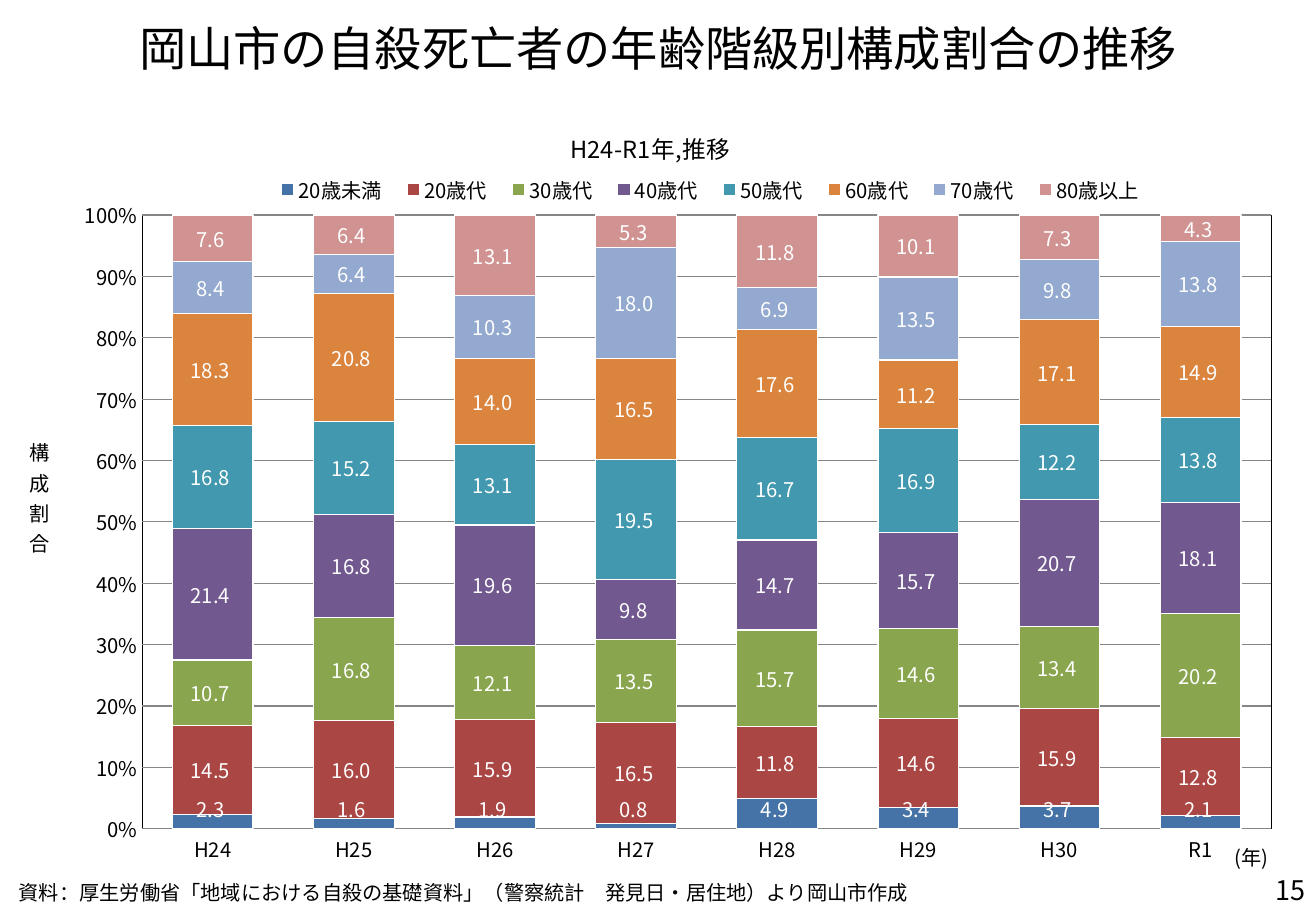
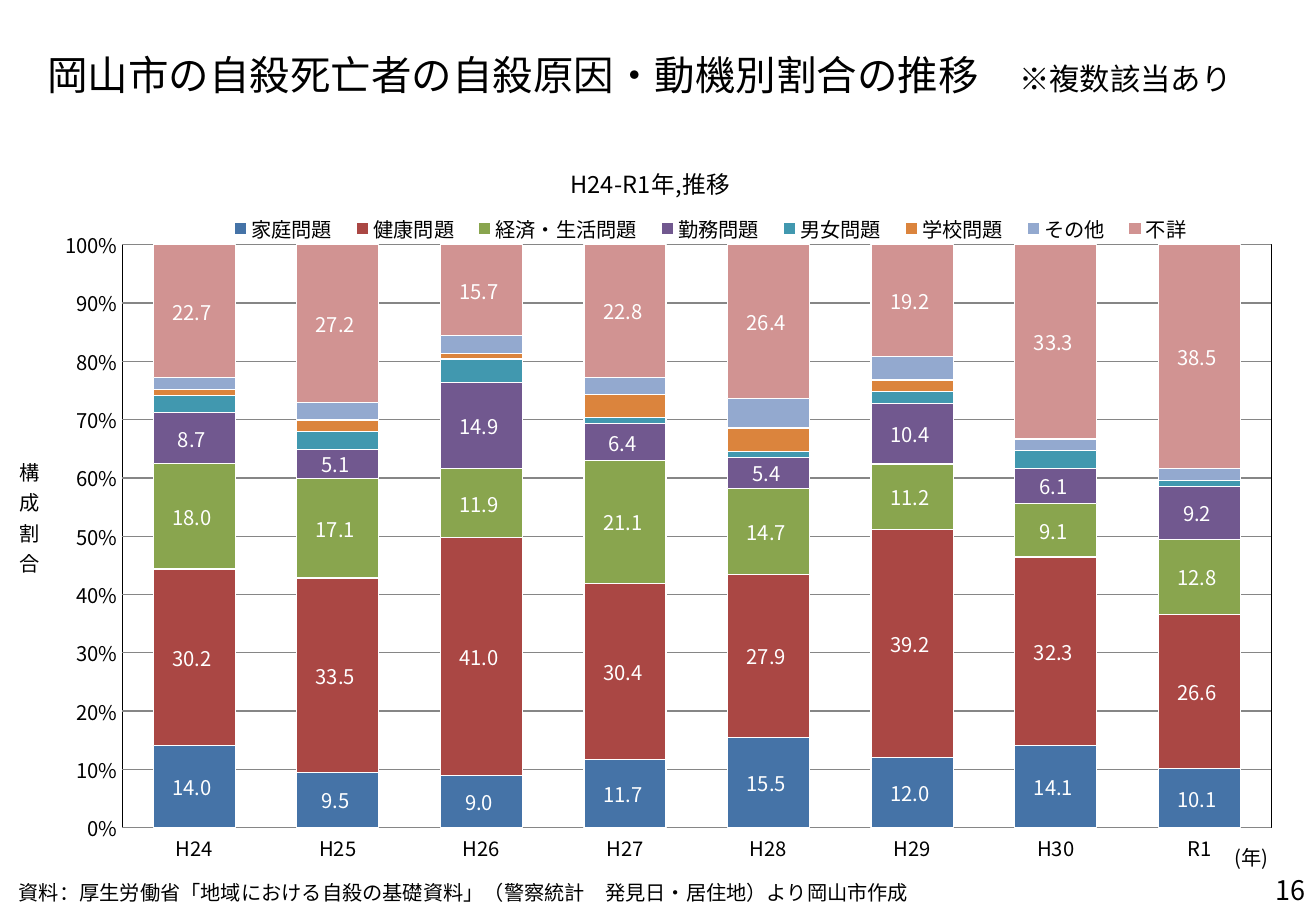
from copy import deepcopy

from lxml.etree import SubElement
from pptx import Presentation
from pptx.chart.data import CategoryChartData
from pptx.dml.color import RGBColor
from pptx.enum.chart import (XL_CHART_TYPE, XL_LABEL_POSITION,
                             XL_LEGEND_POSITION, XL_TICK_MARK)
from pptx.enum.text import MSO_ANCHOR, MSO_AUTO_SIZE, PP_ALIGN
from pptx.oxml import parse_xml
from pptx.oxml.ns import nsdecls, qn
from pptx.util import Pt

FONT = "Noto Sans CJK JP"
BLACK = RGBColor(0x00, 0x00, 0x00)
WHITE = RGBColor(0xFF, 0xFF, 0xFF)
GRID_GREY = RGBColor(0x86, 0x86, 0x86)
SERIES_COLORS = [
    RGBColor(0x45, 0x73, 0xA7), RGBColor(0xAA, 0x47, 0x44),
    RGBColor(0x89, 0xA5, 0x4E), RGBColor(0x71, 0x58, 0x8F),
    RGBColor(0x41, 0x98, 0xAF), RGBColor(0xDB, 0x84, 0x3D),
    RGBColor(0x93, 0xA9, 0xCF), RGBColor(0xD1, 0x93, 0x92),
]
SLIDE_WIDTH, SLIDE_HEIGHT = 780, 540
NUMBER_FORMAT = "0.0_ "
YEARS = ["H24", "H25", "H26", "H27", "H28", "H29", "H30", "R1"]
SOURCE_NOTE = ("資料：厚生労働省「地域における自殺の基礎資料」"
               "（警察統計　発見日・居住地）より岡山市作成")

AGE_GROUPS = {
    "20歳未満": [2.3, 1.6, 1.9, 0.8, 4.9, 3.4, 3.7, 2.1],
    "20歳代": [14.5, 16, 15.9, 16.5, 11.8, 14.6, 15.9, 12.8],
    "30歳代": [10.7, 16.8, 12.1, 13.5, 15.7, 14.6, 13.4, 20.2],
    "40歳代": [21.4, 16.8, 19.6, 9.8, 14.7, 15.7, 20.7, 18.1],
    "50歳代": [16.8, 15.2, 13.1, 19.5, 16.7, 16.9, 12.2, 13.8],
    "60歳代": [18.3, 20.8, 14, 16.5, 17.6, 11.2, 17.1, 14.9],
    "70歳代": [8.4, 6.4, 10.3, 18, 6.9, 13.5, 9.8, 13.8],
    "80歳以上": [7.6, 6.4, 13.1, 5.3, 11.8, 10.1, 7.3, 4.3],
}
MOTIVES = {
    "家庭問題": [14, 9.5, 9, 11.7, 15.5, 12, 14.1, 10.1],
    "健康問題": [30.2, 33.5, 41, 30.4, 27.9, 39.2, 32.3, 26.6],
    "経済・生活問題": [18, 17.1, 11.9, 21.1, 14.7, 11.2, 9.1, 12.8],
    "勤務問題": [8.7, 5.1, 14.9, 6.4, 5.4, 10.4, 6.1, 9.2],
    "男女問題": [3, 3, 4, 1, 1, 2, 3, 1],
    "学校問題": [1, 2, 1, 4, 4, 2, 0, 0],
    "その他": [2, 3, 3, 3, 5, 4, 2, 2],
    "不詳": [22.7, 27.2, 15.7, 22.8, 26.4, 19.2, 33.3, 38.5],
}

# Each slide: title runs (text, size), boxes in points, layouts as chart fractions
SLIDES = [
    dict(number="15", title=[("岡山市の自殺死亡者の年齢階級別構成割合の推移", 28)],
         title_box=(0, 0, 780, 57), chart_box=(0, 57, 780, 461),
         data=AGE_GROUPS, unlabelled=(), base_labelled=("20歳未満",),
         plot=(0.108, 0.153, 0.858, 0.789), legend=(0.2, 0.09, 0.68, 0.06),
         axis_title=(0.02, 0.43)),
    dict(number="16", title=[("岡山市の自殺死亡者の自殺原因・動機別割合の推移　", 24),
                             ("※複数該当あり", 18)],
         title_box=(16, 26, 726, 36), chart_box=(0, 78.5, 780, 438.5),
         data=MOTIVES, unlabelled=("男女問題", "学校問題", "その他"), base_labelled=(),
         plot=(0.093, 0.152, 0.873, 0.788), legend=(0.165, 0.1, 0.75, 0.06),
         axis_title=(0.012, 0.43)),
]


def style_font(font, size, color=BLACK):
    font.name = FONT
    font.size = Pt(size)
    font.bold = False
    font.color.rgb = color


def use_east_asian_font(element):
    """Give every Latin font an East Asian twin."""
    for latin in list(element.iter(qn("a:latin"))):
        east_asian = deepcopy(latin)
        east_asian.tag = qn("a:ea")
        latin.addnext(east_asian)


def add_text(slide, box, runs, align=PP_ALIGN.LEFT, grow=True):
    shape = slide.shapes.add_textbox(*map(Pt, box))
    frame = shape.text_frame
    frame.word_wrap = True
    if grow:
        frame.auto_size = MSO_AUTO_SIZE.SHAPE_TO_FIT_TEXT
    else:
        frame.vertical_anchor = MSO_ANCHOR.MIDDLE
    paragraph = frame.paragraphs[0]
    paragraph.alignment = align
    for text, size in runs:
        run = paragraph.add_run()
        run.text = text
        style_font(run.font, size)
    use_east_asian_font(shape.element)


def set_layout(parent, previous_tag, fractions, inner=False):
    """Fix a chart part at x, y (and width, height) as fractions of the chart."""
    for old_layout in parent.findall(qn("c:layout")):
        parent.remove(old_layout)
    layout = parse_xml(f"<c:layout {nsdecls('c')}><c:manualLayout/></c:layout>")
    manual = layout[0]
    if inner:
        SubElement(manual, qn("c:layoutTarget")).set("val", "inner")
    for name in ("xMode", "yMode"):
        SubElement(manual, qn("c:" + name)).set("val", "edge")
    for name, value in zip("xywh", fractions):
        SubElement(manual, qn("c:" + name)).set("val", str(value))
    if previous_tag:
        parent.find(qn(previous_tag)).addnext(layout)
    else:
        parent.insert(0, layout)


def set_title(title, text, size, position):
    title.text_frame.text = text
    style_font(title.text_frame.paragraphs[0].runs[0].font, size)
    element = title.text_frame._txBody.getparent().getparent()
    set_layout(element, "c:tx", position)
    return element


def style_axes(chart, axis_title_position):
    category_axis, value_axis = chart.category_axis, chart.value_axis
    for axis in (category_axis, value_axis):
        axis.major_tick_mark = axis.minor_tick_mark = XL_TICK_MARK.NONE
        style_font(axis.tick_labels.font, 12)
    value_axis.tick_labels.number_format = "0%"
    value_axis.tick_labels.number_format_is_linked = False
    value_axis.format.line.fill.background()
    value_axis.has_major_gridlines = True
    for line in (category_axis.format.line, value_axis.major_gridlines.format.line):
        line.color.rgb = GRID_GREY
        line.width = Pt(0.75)
    # Upright characters stacked from top to bottom
    element = set_title(value_axis.axis_title, "構成割合", 12, axis_title_position)
    body = next(element.iter(qn("a:bodyPr")))
    body.set("rot", "0")
    body.set("vert", "wordArtVertRtl")


def style_series(plot, unlabelled, base_labelled):
    for series, color in zip(plot.series, SERIES_COLORS):
        series.format.fill.solid()
        series.format.fill.fore_color.rgb = color
        series.format.line.color.rgb = WHITE
        series.format.line.width = Pt(0.75)
        if series.name in unlabelled:
            continue
        labels = series.data_labels
        labels.show_value = True
        labels.number_format = NUMBER_FORMAT
        labels.number_format_is_linked = False
        style_font(labels.font, 12, WHITE)
        if series.name in base_labelled:
            labels.position = XL_LABEL_POSITION.INSIDE_BASE


def add_share_chart(slide, content):
    data = CategoryChartData(number_format=NUMBER_FORMAT)
    data.categories = YEARS
    for name, values in content["data"].items():
        data.add_series(name, values)
    chart = slide.shapes.add_chart(XL_CHART_TYPE.COLUMN_STACKED_100,
                                   *map(Pt, content["chart_box"]), data).chart
    style_font(chart.font, 18)
    plot = chart.plots[0]
    plot.gap_width, plot.overlap, plot.vary_by_categories = 75, 100, False
    style_series(plot, content["unlabelled"], content["base_labelled"])
    style_axes(chart, content["axis_title"])
    set_title(chart.chart_title, "H24-R1年,推移", 14, (0.43, 0.035))

    # Legend
    chart.has_legend = True
    chart.legend.position = XL_LEGEND_POSITION.TOP
    chart.legend.include_in_layout = False
    style_font(chart.legend.font, 12)
    root = chart.element
    set_layout(next(root.iter(qn("c:legend"))), "c:legendPos", content["legend"])

    # Plot area with a thin black frame
    plot_area = next(root.iter(qn("c:plotArea")))
    set_layout(plot_area, None, content["plot"], inner=True)
    plot_area.append(parse_xml(
        f"<c:spPr {nsdecls('c', 'a')}><a:noFill/><a:ln w='9525'><a:solidFill>"
        f"<a:srgbClr val='{BLACK}'/></a:solidFill></a:ln></c:spPr>"))
    use_east_asian_font(root)


def add_footer(slide, number):
    add_text(slide, (4, 518, 624, 22), [(SOURCE_NOTE, 12)])
    add_text(slide, (599, 513, 182, 29), [(number, 16)], PP_ALIGN.RIGHT, grow=False)
    add_text(slide, (724.5, 497.5, 50, 22), [("(年)", 12)])


def add_chart_slide(presentation, content):
    slide = presentation.slides.add_slide(presentation.slide_layouts[6])
    add_share_chart(slide, content)
    add_text(slide, content["title_box"], content["title"], PP_ALIGN.CENTER, grow=False)
    add_footer(slide, content["number"])


def main():
    presentation = Presentation()
    presentation.slide_width = Pt(SLIDE_WIDTH)
    presentation.slide_height = Pt(SLIDE_HEIGHT)
    for content in SLIDES:
        add_chart_slide(presentation, content)
    presentation.save("out.pptx")


if __name__ == "__main__":
    main()
